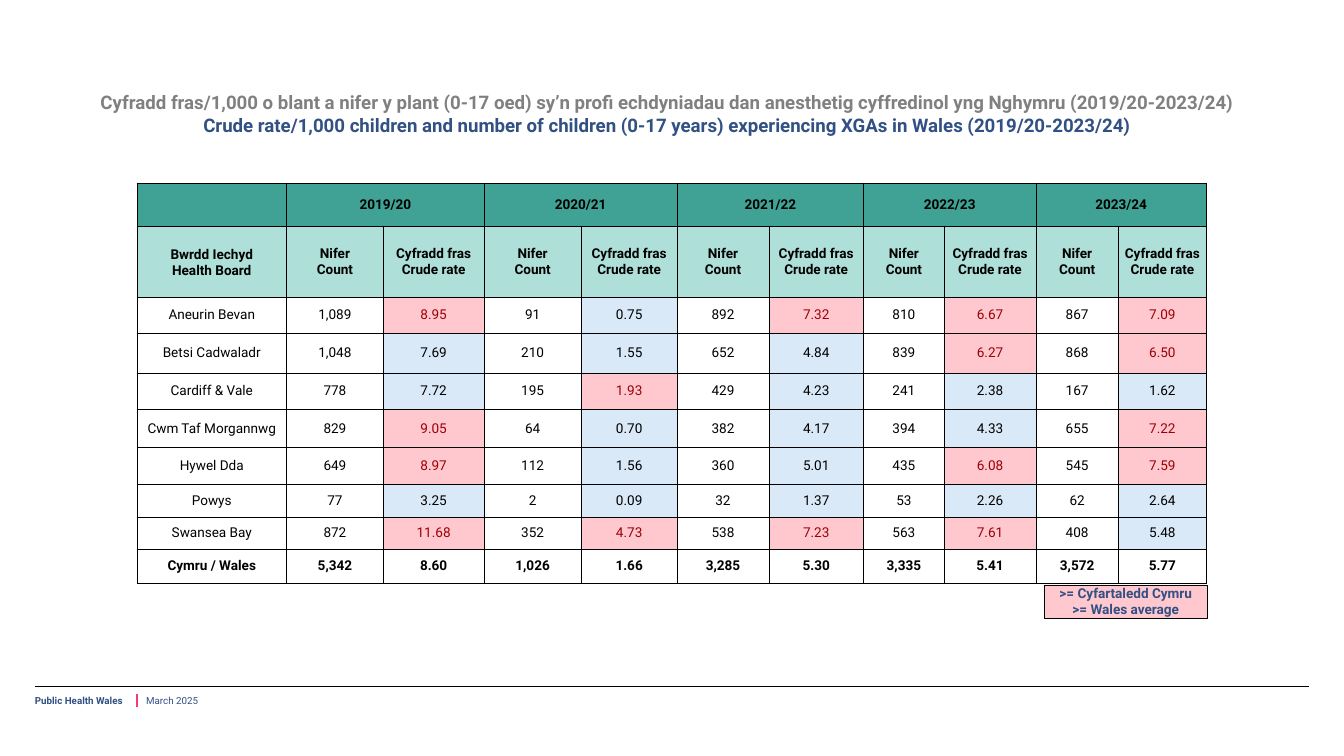
from dataclasses import dataclass

from lxml import etree
from pptx import Presentation
from pptx.dml.color import RGBColor
from pptx.enum.shapes import MSO_CONNECTOR, MSO_SHAPE
from pptx.enum.text import MSO_ANCHOR, MSO_AUTO_SIZE, PP_ALIGN
from pptx.oxml import parse_xml
from pptx.oxml.ns import nsdecls, qn
from pptx.util import Pt

PX = 9144  # 100 px to the inch
LEFT, CENTER = PP_ALIGN.LEFT, PP_ALIGN.CENTER
TOP, MIDDLE = MSO_ANCHOR.TOP, MSO_ANCHOR.MIDDLE
NO_FIT = MSO_AUTO_SIZE.NONE
STRAIGHT, RECT = MSO_CONNECTOR.STRAIGHT, MSO_SHAPE.RECTANGLE


@dataclass(frozen=True)
class Theme:
    font: str = "Roboto"
    title: float = 22
    body: float = 16
    small: float = 11.5
    ink: str = "000000"
    navy: str = "315083"
    grey: str = "808080"
    pink: str = "F43882"
    white: str = "FFFFFF"
    teal: str = "40A294"
    mint: str = "AEDFD8"
    rose: str = "FFC7CE"
    red: str = "9C0006"
    sky: str = "DAE9F8"


T = Theme()

TITLE = [
    "Cyfradd fras/1,000 o blant a nifer y plant (0-17 oed) sy’n profi echdyniadau "
    "dan anesthetig cyffredinol yng Nghymru (2019/20-2023/24)",
    "Crude rate/1,000 children and number of children (0-17 years) experiencing XGAs "
    "in Wales (2019/20-2023/24)",
]
YEARS = ["2019/20", "2020/21", "2021/22", "2022/23", "2023/24"]
BOARD = ["Bwrdd Iechyd", "Health Board"]
COUNT = ["Nifer", "Count"]
RATE = ["Cyfradd fras", "Crude rate"]
BOARDS = [
    ("Aneurin Bevan", "1,089 8.95 91 0.75 892 7.32 810 6.67 867 7.09"),
    ("Betsi Cadwaladr", "1,048 7.69 210 1.55 652 4.84 839 6.27 868 6.50"),
    ("Cardiff & Vale", "778 7.72 195 1.93 429 4.23 241 2.38 167 1.62"),
    ("Cwm Taf Morgannwg", "829 9.05 64 0.70 382 4.17 394 4.33 655 7.22"),
    ("Hywel Dda", "649 8.97 112 1.56 360 5.01 435 6.08 545 7.59"),
    ("Powys", "77 3.25 2 0.09 32 1.37 53 2.26 62 2.64"),
    ("Swansea Bay", "872 11.68 352 4.73 538 7.23 563 7.61 408 5.48"),
]
WALES = ("Cymru / Wales", "5,342 8.60 1,026 1.66 3,285 5.30 3,335 5.41 3,572 5.77")
KEY = [">= Cyfartaledd Cymru", ">= Wales average"]
COLS = [245, 158, 165, 159, 157, 150, 155, 132, 150, 135, 144]
ROWS = [71, 116, 60, 64, 60, 62, 60, 55, 51, 57]


def rgb(code):
    return RGBColor.from_string(code)


def emu(box):
    return [v * PX for v in box]


def write(frame, lines, size, colors, bold=False, align=CENTER, gap=0):
    """Fill a text frame, one paragraph and one colour to a line."""
    frame.text = "\n".join(lines)
    for i, (para, color) in enumerate(zip(frame.paragraphs, colors)):
        para.alignment = align
        if i and gap:
            para.space_before = Pt(gap)
        for run in para.runs:
            font = run.font
            font.name, font.size, font.bold = T.font, Pt(size), bold
            font.color.rgb = rgb(color)


def setup(frame, top=0):
    frame.margin_left = frame.margin_right = frame.margin_bottom = 0
    frame.margin_top = top * PX
    frame.word_wrap = True
    frame.auto_size = NO_FIT
    frame.vertical_anchor = TOP


def rule(slide, start, end, color, width):
    line = slide.shapes.add_connector(STRAIGHT, *emu(start + end))
    line.line.color.rgb = rgb(color)
    line.line.width = Pt(width)
    etree.SubElement(line._element.spPr, qn("a:effectLst"))


def label(slide, box, text, bold=False):
    frame = slide.shapes.add_textbox(*emu(box)).text_frame
    setup(frame)
    write(frame, [text], T.small, [T.navy], bold, LEFT)


def heading(slide, box):
    title = slide.shapes.title
    title.left, title.top, title.width, title.height = emu(box)
    setup(title.text_frame, 2)
    write(title.text_frame, TITLE, T.title, [T.grey, T.navy], True, gap=1.2)


def border(cell):
    props = cell._tc.get_or_add_tcPr()
    for side in ("lnL", "lnR", "lnT", "lnB"):
        props.append(parse_xml(
            f'<a:{side} {nsdecls("a")} w="{Pt(0.5)}"><a:solidFill>'
            f'<a:srgbClr val="{T.ink}"/></a:solidFill></a:{side}>'))


def paint(cell, lines, fill, color=T.ink, bold=False):
    cell.margin_left = cell.margin_right = PX
    cell.margin_top = cell.margin_bottom = 5 * PX
    cell.vertical_anchor = MIDDLE
    border(cell)
    cell.fill.solid()
    cell.fill.fore_color.rgb = rgb(fill)
    if lines:
        write(cell.text_frame, lines, T.body, [color] * len(lines), bold)


def grid(slide, box):
    table = slide.shapes.add_table(len(ROWS), len(COLS), *emu(box)).table
    table.first_row = table.horz_banding = False
    for col, width in zip(table.columns, COLS):
        col.width = width * PX
    for row, height in zip(table.rows, ROWS):
        row.height = height * PX

    for c in range(len(COLS)):
        year = [YEARS[c // 2]] if c % 2 else []
        paint(table.cell(0, c), year, T.teal, bold=True)
        head = BOARD if c == 0 else COUNT if c % 2 else RATE
        paint(table.cell(1, c), head, T.mint, bold=True)
    for c in range(1, len(COLS), 2):
        table.cell(0, c).merge(table.cell(0, c + 1))
    table.cell(1, 0).margin_top = 10 * PX

    means = WALES[1].split()
    for r, (name, values) in enumerate(BOARDS + [WALES], 2):
        total = name == WALES[0]
        paint(table.cell(r, 0), [name], T.white, bold=total)
        for c, (value, mean) in enumerate(zip(values.split(), means), 1):
            fill, color = T.white, T.ink
            if c % 2 == 0 and not total:
                high = float(value) >= float(mean)
                fill, color = (T.rose, T.red) if high else (T.sky, T.ink)
            paint(table.cell(r, c), [value], fill, color, total)


def legend(slide, box):
    shape = slide.shapes.add_shape(RECT, *emu(box))
    shape.shadow.inherit = False
    shape.fill.solid()
    shape.fill.fore_color.rgb = rgb(T.rose)
    shape.line.color.rgb = rgb(T.ink)
    shape.line.width = Pt(0.5)
    setup(shape.text_frame)
    write(shape.text_frame, KEY, T.body, [T.navy] * 2, True, gap=0.3)


def footer(slide, box):
    x, y, w, h = box
    top = y + 14
    rule(slide, (x, y), (x + w, y), T.ink, 0.41)
    rule(slide, (x + 167, top), (x + 167, y + h), T.pink, 1.65)
    label(slide, (x, top, 155, 19), "Public Health Wales", True)
    label(slide, (x + 182, top, 125, 19), "March 2025")


def main():
    deck = Presentation()
    deck.slide_width, deck.slide_height = emu((2199, 1237))
    slide = deck.slides.add_slide(deck.slide_layouts[5])
    footer(slide, (57, 1122, 2084, 35))
    heading(slide, (108, 146, 1966, 77))
    grid(slide, (224, 299, sum(COLS), sum(ROWS)))
    legend(slide, (1709, 957, 266, 54))
    deck.save("out.pptx")


if __name__ == "__main__":
    main()
